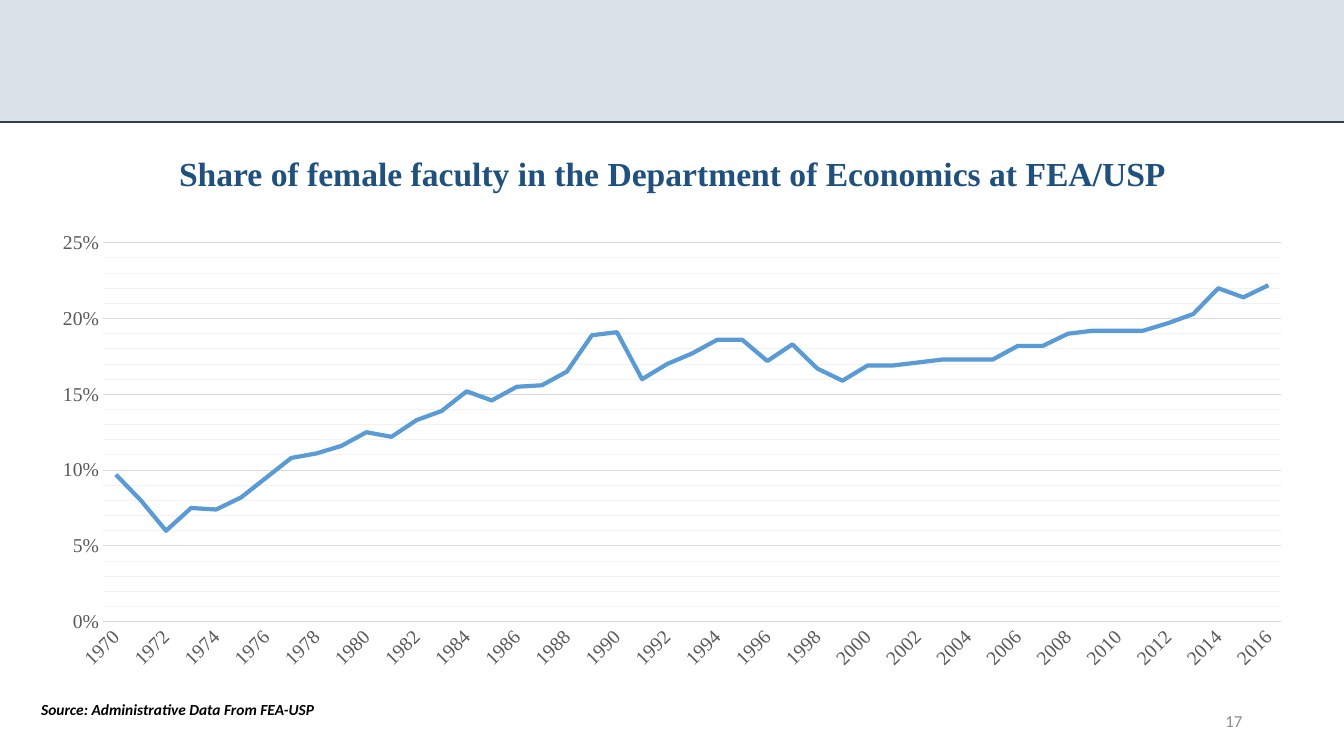
from lxml import etree
from pptx import Presentation
from pptx.chart.data import CategoryChartData
from pptx.dml.color import RGBColor
from pptx.enum.chart import XL_CHART_TYPE, XL_TICK_MARK
from pptx.enum.shapes import MSO_CONNECTOR, MSO_SHAPE
from pptx.enum.text import MSO_ANCHOR, PP_ALIGN
from pptx.oxml import parse_xml
from pptx.oxml.ns import nsdecls, qn
from pptx.util import Inches, Pt

LINE_STACKED = XL_CHART_TYPE.LINE_STACKED
NO_TICK = XL_TICK_MARK.NONE
LEFT, CENTER, RIGHT = PP_ALIGN.LEFT, PP_ALIGN.CENTER, PP_ALIGN.RIGHT
TOP, MIDDLE = MSO_ANCHOR.TOP, MSO_ANCHOR.MIDDLE

NAVY = RGBColor(0x20, 0x51, 0x7E)
RULE = RGBColor(0x33, 0x3F, 0x50)
BLUE = RGBColor(0x5B, 0x9B, 0xD5)
BLACK = RGBColor(0, 0, 0)
LABEL = RGBColor(0x59, 0x59, 0x59)
NUMBER = RGBColor(0x8C, 0x8C, 0x8C)
MAJOR = RGBColor(0xD9, 0xD9, 0xD9)
MINOR = RGBColor(0xF2, 0xF2, 0xF2)
SERIF, SANS = "Times New Roman", "Calibri"

WIDTH, HEIGHT = 13.33, 7.5
BAND_HEIGHT = 1.21
CHART_BOX = (0.37, 2.21, 12.6, 4.53)
PLOT_SHARE = {"x": 0.052, "y": 0.044, "w": 0.927, "h": 0.83}

TEXTS = [
    ("Share of female faculty in the Department of Economics at FEA/USP",
     (0.52, 1.47, 12.3, 0.5), CENTER, TOP, True,
     dict(name=SERIF, size=Pt(24), bold=True), NAVY),
    ("Source: Administrative Data From FEA-USP",
     (0.31, 6.9, 2.94, 0.29), LEFT, TOP, False,
     dict(name=SANS, size=Pt(11), bold=True, italic=True), BLACK),
    ("17", (9.42, 6.95, 3, 0.4), RIGHT, MIDDLE, True,
     dict(name=SANS, size=Pt(12)), NUMBER),
]

FIRST_YEAR = 1970
FEMALE_SHARE = [
    0.097, 0.08, 0.06, 0.075, 0.074, 0.082, 0.095, 0.108, 0.111, 0.116,
    0.125, 0.122, 0.133, 0.139, 0.152, 0.146, 0.155, 0.156, 0.165, 0.189,
    0.191, 0.16, 0.17, 0.177, 0.186, 0.186, 0.172, 0.183, 0.167, 0.159,
    0.169, 0.169, 0.171, 0.173, 0.173, 0.173, 0.182, 0.182, 0.19, 0.192,
    0.192, 0.192, 0.197, 0.203, 0.22, 0.214, 0.222,
]


def set_line(line, color, width):
    line.color.rgb = color
    line.width = Pt(width)


def set_font(font, color, **props):
    for key, value in props.items():
        setattr(font, key, value)
    font.color.rgb = color


def add_header(slide):
    sp = slide.shapes.add_shape(MSO_SHAPE.RECTANGLE, 0, 0,
                                Inches(WIDTH), Inches(BAND_HEIGHT))
    sp.shadow.inherit = False
    sp.fill.solid()
    sp.fill.fore_color.rgb = NAVY
    sp.line.fill.background()
    color = sp.fill._xPr.find(".//" + qn("a:srgbClr"))
    etree.SubElement(color, qn("a:alpha"), val="17000")
    rule = slide.shapes.add_connector(MSO_CONNECTOR.STRAIGHT, 0, Inches(BAND_HEIGHT),
                                      Inches(WIDTH), Inches(BAND_HEIGHT))
    set_line(rule.line, RULE, 1.5)
    etree.SubElement(rule._element.spPr, qn("a:effectLst"))


def add_text(slide, text, box, align, anchor, wrap, props, color):
    tf = slide.shapes.add_textbox(*map(Inches, box)).text_frame
    tf.word_wrap = wrap
    tf.vertical_anchor = anchor
    p = tf.paragraphs[0]
    p.text = text
    p.alignment = align
    set_font(p.runs[0].font, color, **props)


def add_share_chart(slide):
    data = CategoryChartData(number_format="0%")
    data.categories = [str(FIRST_YEAR + i) for i in range(len(FEMALE_SHARE))]
    data.add_series("Series 1", FEMALE_SHARE)
    chart = slide.shapes.add_chart(LINE_STACKED, *map(Inches, CHART_BOX), data).chart
    chart.has_legend = False
    chart.has_title = False
    set_font(chart.font, BLACK, name=SERIF, size=Pt(14))

    plot = chart.plots[0]
    plot.vary_by_categories = False
    series = plot.series[0]
    series.smooth = False
    series.marker.style = None
    set_line(series.format.line, BLUE, 3)
    marker = series._element.get_or_add_marker()
    marker.get_or_add_symbol().set("val", "none")

    years, shares = chart.category_axis, chart.value_axis
    for axis in (years, shares):
        axis.major_tick_mark = axis.minor_tick_mark = NO_TICK
        set_font(axis.tick_labels.font, LABEL, name=SERIF, size=Pt(14))
    years.has_major_gridlines = False
    set_line(years.format.line, MAJOR, 0.75)
    years._element.find(qn("c:txPr")).find(qn("a:bodyPr")).set("rot", "-2700000")
    skip = parse_xml(f'<c:tickLblSkip {nsdecls("c")} val="2"/>')
    years._element.find(qn("c:noMultiLvlLbl")).addprevious(skip)

    shares.minimum_scale, shares.maximum_scale = 0, 0.25
    shares.major_unit, shares.minor_unit = 0.05, 0.01
    shares.has_major_gridlines = shares.has_minor_gridlines = True
    set_line(shares.major_gridlines.format.line, MAJOR, 0.75)
    minor = parse_xml(
        f'<c:spPr {nsdecls("c", "a")}><a:ln w="9525"><a:solidFill>'
        f'<a:srgbClr val="{MINOR}"/></a:solidFill></a:ln></c:spPr>')
    shares._element.find(qn("c:minorGridlines")).append(minor)
    shares.format.line.fill.background()
    shares.tick_labels.number_format = "0%"
    shares.tick_labels.number_format_is_linked = False

    area = chart._chartSpace.chart.plotArea
    for old in area.findall(qn("c:layout")):
        area.remove(old)
    layout = etree.Element(qn("c:layout"))
    manual = etree.SubElement(layout, qn("c:manualLayout"))
    settings = {"layoutTarget": "inner", "xMode": "edge", "yMode": "edge", **PLOT_SHARE}
    for tag, value in settings.items():
        etree.SubElement(manual, qn("c:" + tag), val=str(value))
    area.insert(0, layout)


def main():
    prs = Presentation()
    prs.slide_width, prs.slide_height = Inches(WIDTH), Inches(HEIGHT)
    slide = prs.slides.add_slide(prs.slide_layouts[6])
    add_header(slide)
    add_share_chart(slide)
    for item in TEXTS:
        add_text(slide, *item)
    prs.save("out.pptx")


if __name__ == "__main__":
    main()
